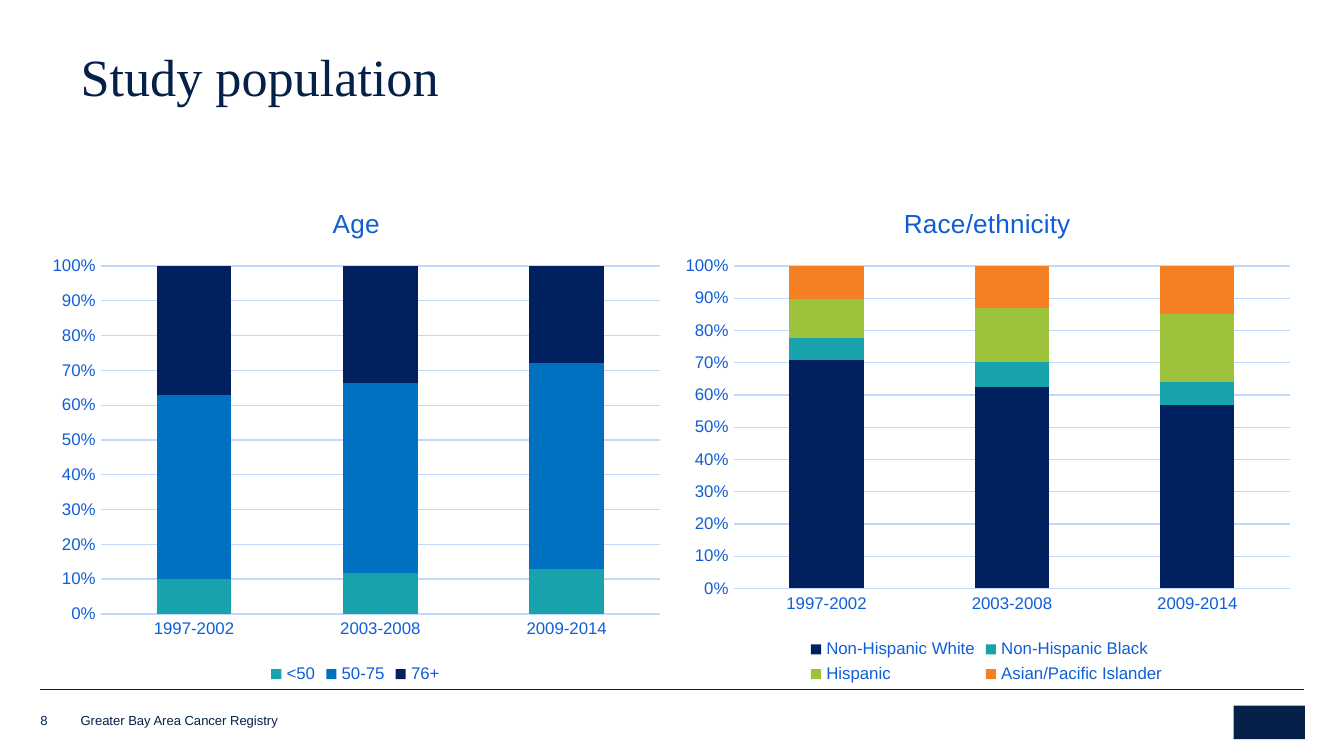
from lxml import etree
from pptx import Presentation
from pptx.chart.data import CategoryChartData
from pptx.dml.color import RGBColor
from pptx.enum.chart import XL_CHART_TYPE, XL_LEGEND_POSITION, XL_TICK_MARK
from pptx.enum.shapes import MSO_CONNECTOR, MSO_SHAPE
from pptx.enum.text import MSO_ANCHOR, PP_ALIGN
from pptx.oxml.ns import qn
from pptx.util import Inches, Pt

STACKED = XL_CHART_TYPE.COLUMN_STACKED_100
BOTTOM = XL_LEGEND_POSITION.BOTTOM
NO_TICK = XL_TICK_MARK.NONE
NAVY, BLUE, PALE, TEAL = "052049", "0F5ED7", "C2D9FB", "18A3AC"

TITLE = "Study population"
YEARS = ["1997-2002", "2003-2008", "2009-2014"]
# box and plot: left, top, width, height; head: left, top of the chart title
CHARTS = [
    dict(name="Age", box=(0.29, 1.37, 4.71, 3.76), plot=(0.75, 1.98, 4.16, 2.59),
         head=(2.44, 1.5),
         series=[("<50", TEAL, [10, 12, 13]),
                 ("50-75", "0070C0", [53, 55, 59]),
                 ("76+", "002060", [37, 34, 28])]),
    dict(name="Race/ethnicity", box=(5, 1.37, 4.68, 3.76), plot=(5.46, 1.98, 4.14, 2.4),
         head=(6.69, 1.5),
         series=[("Non-Hispanic White", "002060", [70, 63, 57]),
                 ("Non-Hispanic Black", TEAL, [7, 8, 7]),
                 ("Hispanic", "9DC23B", [12, 17, 21]),
                 ("Asian/Pacific Islander", "F58024", [10, 13, 15])]),
]
FOOTER = [("8", (0.3, 5.29, 0.27, 0.13)),
          ("Greater Bay Area Cancer Registry", (0.6, 5.31, 4.71, 0.11))]


def rgb(code):
    return RGBColor.from_string(code)


def style(font, size, color, name="Arial"):
    for key, value in dict(size=Pt(size), name=name, bold=False).items():
        setattr(font, key, value)
    font.color.rgb = rgb(color)


def rule(line, color, width):
    line.color.rgb = rgb(color)
    line.width = Pt(width)


def pin(parent, index, box, place, inner=False):
    """Fix a chart part at a slide position, as fractions of the chart box."""
    for old in parent.findall(qn("c:layout")):
        parent.remove(old)
    layout = etree.Element(qn("c:layout"))
    manual = etree.SubElement(layout, qn("c:manualLayout"))
    items = [("layoutTarget", "inner")] if inner else []
    items += [("xMode", "edge"), ("yMode", "edge")]
    left, top, wide, high = box
    parts = [place[0] - left, place[1] - top, *place[2:]]
    sizes = (wide, high, wide, high)
    items += [(key, f"{part / size:.4f}")
              for key, part, size in zip("xywh", parts, sizes)]
    for key, value in items:
        etree.SubElement(manual, qn(f"c:{key}")).set("val", value)
    parent.insert(index, layout)


def add_bars(slide, name, box, plot, head, series):
    data = CategoryChartData()
    data.categories = YEARS
    for label, _, values in series:
        data.add_series(label, values)
    chart = slide.shapes.add_chart(STACKED, *map(Inches, box), data).chart
    style(chart.font, 10, NAVY)

    chart.has_title = True
    frame = chart.chart_title.text_frame
    frame.text = name
    style(frame.paragraphs[0].runs[0].font, 14, BLUE)
    pin(chart.chart_title.element, 1, box, head)
    pin(chart.element.find(".//" + qn("c:plotArea")), 0, box, plot, inner=True)

    chart.has_legend = True
    chart.legend.position = BOTTOM
    chart.legend.include_in_layout = False
    style(chart.legend.font, 9, BLUE)

    years, share = chart.category_axis, chart.value_axis
    for axis in (years, share):
        axis.major_tick_mark = axis.minor_tick_mark = NO_TICK
        style(axis.tick_labels.font, 9, BLUE)
    rule(years.format.line, PALE, 0.75)
    share.format.line.fill.background()
    share.has_major_gridlines = True
    rule(share.major_gridlines.format.line, PALE, 0.75)
    share.tick_labels.number_format = "0%"
    share.tick_labels.number_format_is_linked = False

    bars = chart.plots[0]
    for key, value in dict(gap_width=150, overlap=100, vary_by_categories=False).items():
        setattr(bars, key, value)
    for item, (_, color, _) in zip(bars.series, series):
        item.format.fill.solid()
        item.format.fill.fore_color.rgb = rgb(color)


def add_note(slide, text, box):
    frame = slide.shapes.add_textbox(*map(Inches, box)).text_frame
    for key in ("left", "top", "right", "bottom"):
        setattr(frame, f"margin_{key}", 0)
    frame.word_wrap = True
    frame.vertical_anchor = MSO_ANCHOR.BOTTOM
    frame.text = text
    style(frame.paragraphs[0].runs[0].font, 7, NAVY)


def main():
    deck = Presentation()
    deck.slide_width, deck.slide_height = Inches(10), Inches(10 * 9 / 16)
    slide = deck.slides.add_slide(deck.slide_layouts[5])

    title = slide.shapes.title
    spots = zip(("left", "top", "width", "height"), (0.5, 0.35, 8.94, 0.5))
    for key, value in spots:
        setattr(title, key, Inches(value))
    title.text_frame.text = TITLE
    line = title.text_frame.paragraphs[0]
    line.alignment = PP_ALIGN.LEFT
    line.line_spacing = 0.85
    style(line.runs[0].font, 28, NAVY, "Times New Roman")

    for chart in CHARTS:
        add_bars(slide, **chart)

    ends = map(Inches, (0.3, 5.13, 9.7, 5.13))
    base = slide.shapes.add_connector(MSO_CONNECTOR.STRAIGHT, *ends)
    rule(base.line, NAVY, 0.25)
    etree.SubElement(base.element.spPr, qn("a:effectLst"))

    for text, box in FOOTER:
        add_note(slide, text, box)

    mark = slide.shapes.add_shape(MSO_SHAPE.RECTANGLE, *map(Inches, (9.18, 5.25, 0.53, 0.25)))
    mark.shadow.inherit = False
    mark.fill.solid()
    mark.fill.fore_color.rgb = rgb(NAVY)
    mark.line.fill.background()

    deck.save("out.pptx")


if __name__ == "__main__":
    main()
